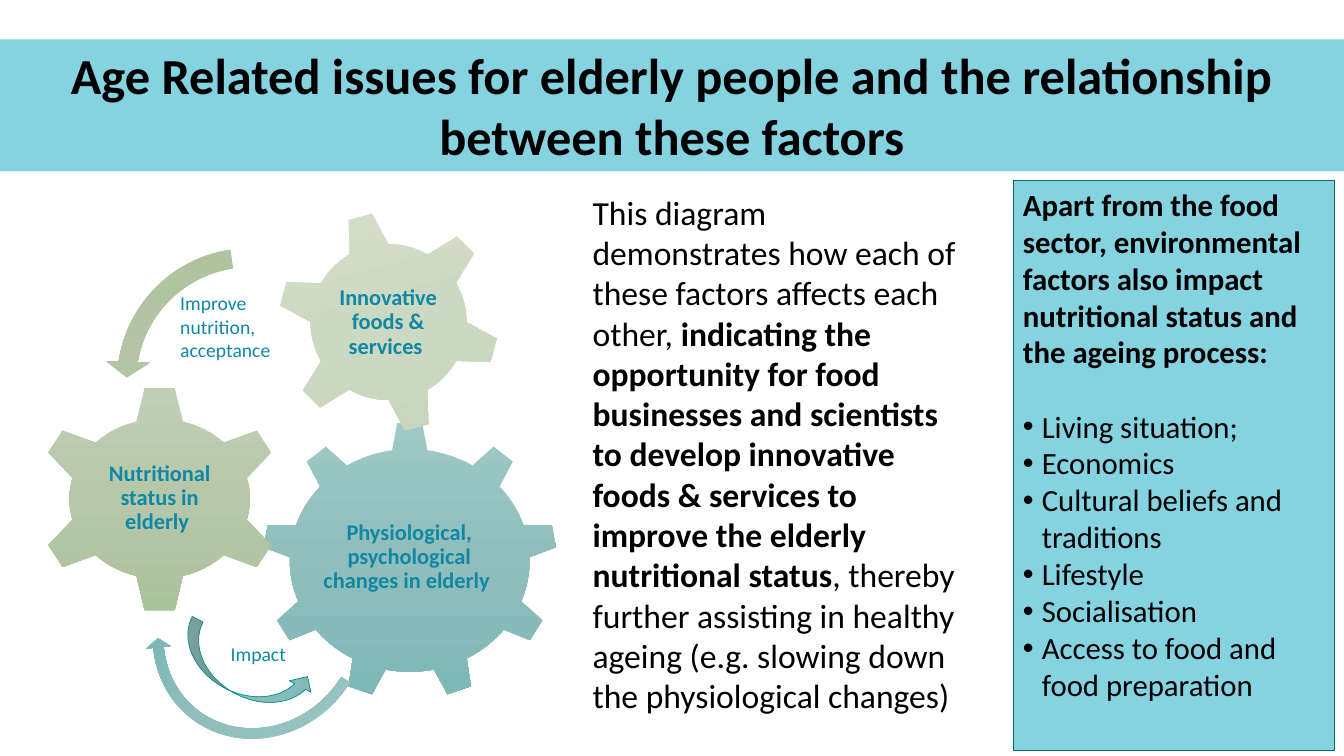
import copy
import pptx
import pptx.util
import pptx.dml.color
import pptx.enum.shapes
import pptx.enum.text
import pptx.oxml
import pptx.oxml.ns

Pt = pptx.util.Pt
SHAPE = pptx.enum.shapes.MSO_SHAPE
ALIGN = pptx.enum.text.PP_ALIGN
ANCHOR = pptx.enum.text.MSO_ANCHOR

COLORS = {"band": "85D2E1", "text": "000000", "label": "1188A3",
          "panel_line": "086D6E", "arrow_line": "0D9390"}
TEAL = [(0, "9EC9C7"), (0.5, "90BEBC"), (1, "7CB8B5")]
TEAL_ARROW = [(0.01, "9EC9C7"), (0.5, "90BEBC"), (0.67, "7CB8B5")]
GREEN = [(0, "C1CFB6"), (0.5, "B6C7AA"), (1, "ABC19C")]
PALE = [(0, "D6E0CD"), (0.5, "CCD9C2"), (1, "C6D5B9")]
GREEN_ARROW = [(0, "ACC199"), (0.75, "B6C7AA"), (1, "ABC19C")]

TITLE = "Age Related issues for elderly people and the relationship between these factors"
# gear shape, box, rotation, gradient, label, label box
GEARS = [
    (SHAPE.GEAR_9, (187.2, 301, 211, 198.7), 0, TEAL,
     "Physiological, psychological changes in elderly ", (228.2, 347, 128.2, 102.2)),
    (SHAPE.GEAR_6, (25.2, 275, 177.8, 162.7), 0, GREEN,
     "Nutritional status in elderly ", (68.4, 316.1, 91.4, 79.9)),
    (SHAPE.GEAR_6, (198, 150.5, 159.1, 159.1), 345, PALE,
     "Innovative foods & services ", (232.6, 185.8, 89.3, 89.3)),
]
# arrow shape, box, rotation, gradient, adjustments
ROUND_ARROWS = [
    (SHAPE.CIRCULAR_ARROW, (100.1, 369.4, 172.1, 159.1), 127.3, TEAL_ARROW,
     (0.047, 2.99, 25.352, 158.209, 0.055)),
    (SHAPE.LEFT_CIRCULAR_ARROW, (74.9, 168.5, 207.4, 207.4), 14.1, GREEN_ARROW,
     (0.065, 4.3, 104.891, 148.378, 0.075)),
]
IMPROVE = ["Improve", "nutrition,", "acceptance"]
EXPLANATION = [
    ("This diagram demonstrates how each of these factors affects each other,", False),
    (" indicating the opportunity for food businesses and scientists to develop innovative "
     "foods & services to improve the elderly nutritional status", True),
    (", thereby further assisting in healthy ageing (e.g. slowing down the physiological "
     "changes)", False),
]
PANEL_HEADING = ("Apart from the food sector, environmental factors also impact "
                 "nutritional status and the ageing process:")
PANEL_ITEMS = ["Living situation;", "Economics", "Cultural beliefs and traditions",
               "Lifestyle", "Socialisation", "Access to food and food preparation"]


def rgb(value):
    return pptx.dml.color.RGBColor.from_string(value)


def add_shape(slide, kind, box, fill, line=None, rotation=0):
    """Add a preset shape; fill is a hex string or a list of gradient stops."""
    sp = slide.shapes.add_shape(kind, *map(Pt, box))
    sp.shadow.inherit = False
    sp.rotation = rotation
    if isinstance(fill, str):
        sp.fill.solid()
        sp.fill.fore_color.rgb = rgb(fill)
    else:
        sp.fill.gradient()
        sp.fill.gradient_angle = 270
        stops = sp._element.spPr.find(".//" + pptx.oxml.ns.qn("a:gsLst"))
        while len(stops) < len(fill):
            stops.append(copy.deepcopy(stops[-1]))
        for stop, (position, color) in zip(sp.fill.gradient_stops, fill):
            stop.position = position
            stop.color.rgb = rgb(color)
    if line:
        sp.line.color.rgb = rgb(line)
        sp.line.width = Pt(0.5)
    else:
        sp.line.fill.background()
    return sp


def write(tf, paragraphs, size, color, align=ALIGN.LEFT, anchor=ANCHOR.TOP, wrap=True):
    """Fill a text frame; each paragraph is a list of (text, bold) runs."""
    tf.word_wrap = wrap
    tf.vertical_anchor = anchor
    for i, runs in enumerate(paragraphs):
        p = tf.add_paragraph() if i else tf.paragraphs[0]
        p.alignment = align
        for text, bold in runs:
            r = p.add_run()
            r.text = text
            r.font.name = "Calibri"
            r.font.size = Pt(size)
            r.font.bold = bold
            r.font.color.rgb = rgb(color)
    return tf


def add_text(slide, box, *args, **kwargs):
    tb = slide.shapes.add_textbox(*map(Pt, box))
    return write(tb.text_frame, *args, **kwargs)


def add_bullet(p):
    pPr = p._p.get_or_add_pPr()
    pPr.set("marL", str(Pt(13.5)))
    pPr.set("indent", str(-Pt(13.5)))
    for tag, name, value in (("buFont", "typeface", "Arial"), ("buChar", "char", "•")):
        pPr.append(pptx.oxml.parse_xml(
            f'<a:{tag} {pptx.oxml.ns.nsdecls("a")} {name}="{value}"/>'))


def main():
    prs = pptx.Presentation()
    prs.slide_width, prs.slide_height = Pt(960), Pt(540)
    slide = prs.slides.add_slide(prs.slide_layouts[6])

    for kind, box, rotation, fill, label, label_box in GEARS:
        add_shape(slide, kind, box, fill, rotation=rotation)
        tf = add_text(slide, label_box, [[(label, True)]], 16, COLORS["label"],
                      ALIGN.CENTER, ANCHOR.MIDDLE)
        tf.margin_left = tf.margin_right = tf.margin_top = tf.margin_bottom = Pt(1.5)
        tf.paragraphs[0].line_spacing = 0.9

    for kind, box, rotation, fill, adjustments in ROUND_ARROWS:
        sp = add_shape(slide, kind, box, fill, rotation=rotation)
        for i, value in enumerate(adjustments):
            sp.adjustments[i] = value

    title = add_shape(slide, SHAPE.RECTANGLE, (0, 28.1, 960, 94.3), COLORS["band"])
    write(title.text_frame, [[(TITLE, True)]], 36, COLORS["text"], ALIGN.CENTER)

    add_text(slide, (121.7, 204.5, 89.3, 74.9), [[(line, False)] for line in IMPROVE],
             14, COLORS["label"])
    add_shape(slide, SHAPE.CURVED_RIGHT_ARROW, (157, 428.4, 34.6, 101.5), TEAL,
              COLORS["arrow_line"], 297.6)
    add_text(slide, (157.7, 455, 57.6, 24.5), [[("Impact", False)]], 14,
             COLORS["label"], wrap=False)
    add_text(slide, (416.2, 133.2, 274.3, 385.2), [EXPLANATION], 24, COLORS["text"])

    panel = add_shape(slide, SHAPE.RECTANGLE, (723.6, 128.9, 229.7, 406.8),
                      COLORS["band"], COLORS["panel_line"])
    tf = write(panel.text_frame,
               [[(PANEL_HEADING, True)]] + [[(item, False)] for item in PANEL_ITEMS],
               22, COLORS["text"])
    bullets = tf.paragraphs[1:]
    bullets[0].space_before = Pt(26.5)
    for p in bullets:
        add_bullet(p)

    prs.save("out.pptx")


if __name__ == "__main__":
    main()
